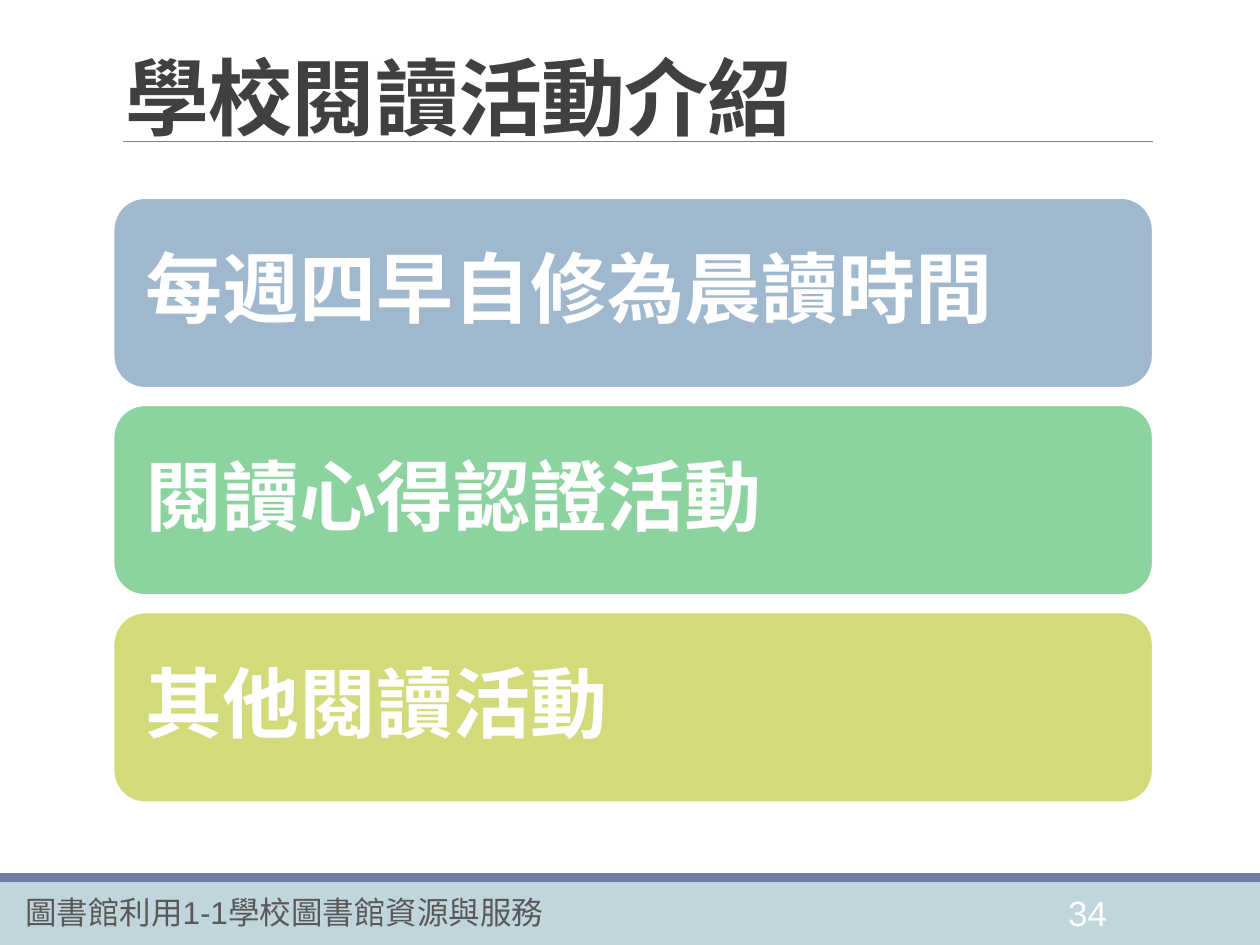
"""Build the slide on school reading activities."""
from lxml import etree
from pptx import Presentation, util as u
from pptx.dml.color import RGBColor
from pptx.enum import shapes, text
from pptx.oxml import ns

WIDE, HIGH = 10, 7.5
TITLE = "學校閱讀活動介紹"
CARDS = [
    ("每週四早自修為晨讀時間", "9FB8CD"),
    ("閱讀心得認證活動", "8DD3A0"),
    ("其他閱讀活動", "D2DA7A"),
]
FOOT = "圖書館利用1-1學校圖書館資源與服務"
PAGE = "34"
THEME = {
    "font": "Arial", "asian": "Noto Sans CJK SC",
    "title": (48, "404040"), "card": (44, "FFFFFF"),
    "foot": (18, "595959"), "page": (20, "FFFFFF"),
    "band": "C0D6DC", "edge": "727CA3", "rule": "808080", "line": "FFFFFF",
}
LEFT, SPAN = 0.09 * WIDE, 0.825 * WIDE
TOP, TALL, STEP = 1.57, 1.51, 1.645
BAND, EDGE = 0.5, 0.07


def box(area):
    return [u.Inches(n) for n in area]


def tint(name):
    return RGBColor.from_string(name)


def write(frame, words, role, font=THEME["font"], bold=False):
    size, color = THEME[role]
    para = frame.paragraphs[0]
    para.alignment = text.PP_ALIGN.LEFT
    run = para.add_run()
    run.text = words
    run.font.name, run.font.bold = font, bold
    run.font.size, run.font.color.rgb = u.Pt(size), tint(color)
    props = run.font._element
    asian = etree.SubElement(props, ns.qn("a:ea"))
    asian.set("typeface", THEME["asian"])
    return para, props


def block(slide, kind, area, fill, line=None):
    item = slide.shapes.add_shape(kind, *box(area))
    item.shadow.inherit = False
    item.fill.solid()
    item.fill.fore_color.rgb = tint(fill)
    if line:
        item.line.color.rgb = tint(line)
        item.line.width = u.Pt(1.25)
    else:
        item.line.fill.background()
    return item


def label(slide, area, words, role, wrap=True):
    frame = slide.shapes.add_textbox(*box(area)).text_frame
    frame.word_wrap = wrap
    write(frame, words, role)
    return frame


def footer(slide):
    kind = shapes.MSO_SHAPE.RECTANGLE
    top = HIGH - BAND
    block(slide, kind, (0, top, WIDE, BAND), THEME["band"])
    block(slide, kind, (0, top - EDGE, WIDE, EDGE), THEME["edge"])
    label(slide, (8.38, 7.03, 0.7, 0.4), PAGE, "page")
    note = label(slide, (0.1, 7.04, 4.65, 0.4), FOOT, "foot", False)
    note.auto_size = text.MSO_AUTO_SIZE.SHAPE_TO_FIT_TEXT


def header(slide):
    ends = box((0.98, 1.12, LEFT + SPAN, 1.12))
    rule = slide.shapes.add_connector(shapes.MSO_CONNECTOR.STRAIGHT, *ends)
    rule.line.color.rgb = tint(THEME["rule"])
    rule.line.width = u.Pt(0.5)
    etree.SubElement(rule._element.spPr, ns.qn("a:effectLst"))
    frame = slide.shapes.add_textbox(*box((LEFT, 0.4, SPAN, 0.81))).text_frame
    frame.word_wrap = True
    frame.vertical_anchor = text.MSO_ANCHOR.BOTTOM
    para, props = write(frame, TITLE, "title", THEME["asian"], True)
    para.line_spacing = 0.85
    props.set("spc", "-50")


def cards(slide):
    for row, (words, fill) in enumerate(CARDS):
        area = (LEFT, TOP + row * STEP, SPAN, TALL)
        kind = shapes.MSO_SHAPE.ROUNDED_RECTANGLE
        frame = block(slide, kind, area, fill, THEME["line"]).text_frame
        frame.word_wrap = True
        frame.vertical_anchor = text.MSO_ANCHOR.MIDDLE
        frame.margin_left = frame.margin_right = u.Inches(0.18)
        para, _ = write(frame, words, "card", bold=True)
        para.line_spacing = 0.9
        para.space_after = u.Pt(15)


def main():
    deck = Presentation()
    deck.slide_width, deck.slide_height = box((WIDE, HIGH))
    slide = deck.slides.add_slide(deck.slide_layouts[6])
    footer(slide)
    header(slide)
    cards(slide)
    deck.save("out.pptx")


if __name__ == "__main__":
    main()
